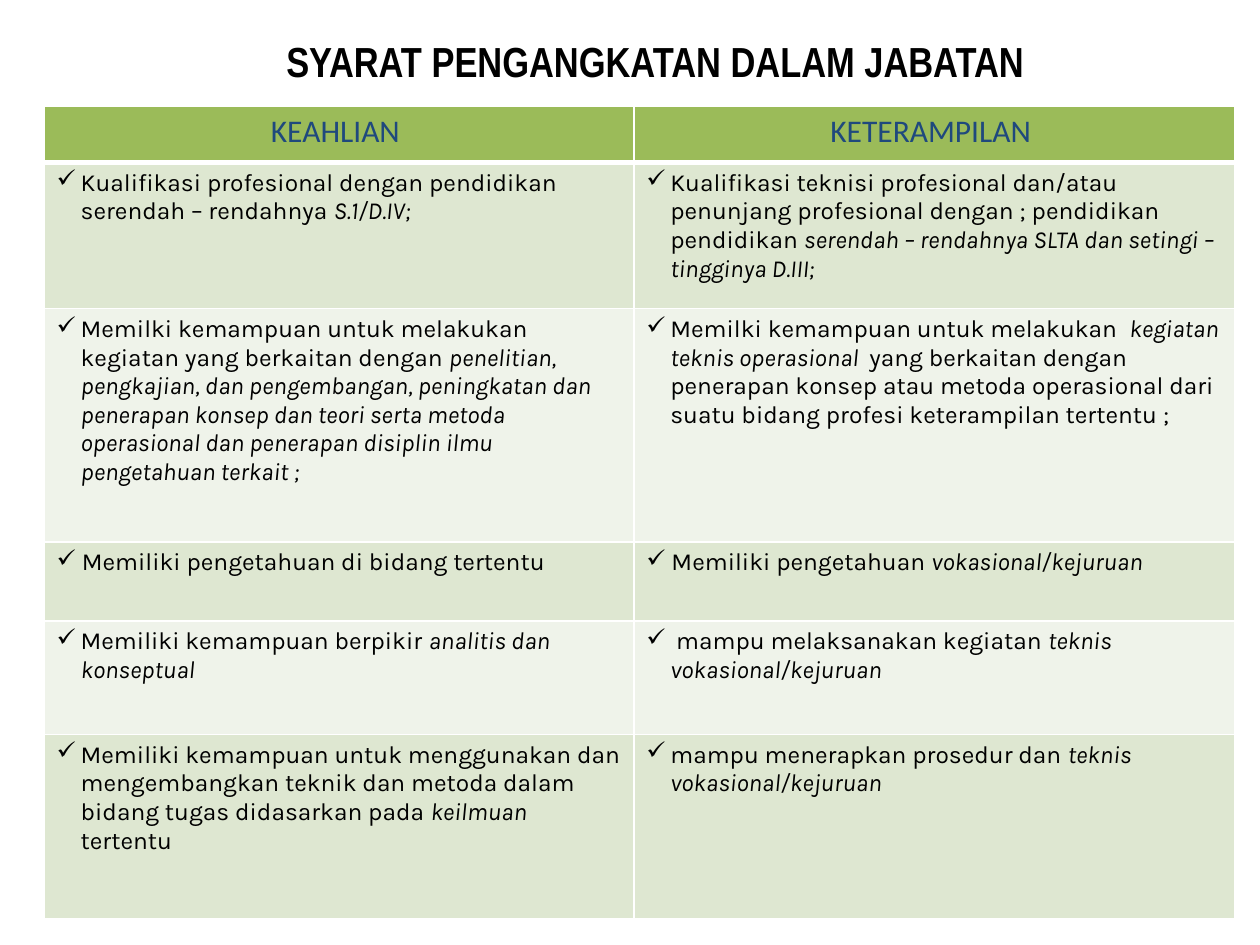
from lxml import etree
from pptx import Presentation
from pptx.dml.color import RGBColor
from pptx.enum import text
from pptx.oxml.ns import qn
from pptx.util import Inches, Pt

COLORS = {"black": "000000", "navy": "1F497D", "green": "9BBB59",
          "band_dark": "DEE7D1", "band_light": "EFF3EA", "white": "FFFFFF"}
TITLE = {"size": Pt(24), "name": "Arial Narrow", "bold": True}
HEAD = {"size": Pt(18), "name": "Calibri", "bold": False}
BODY = {"size": Pt(14), "name": "Karla", "bold": False}
COL_WIDTHS = [4.68, 4.77]
ROW_HEIGHTS = [0.45, 1.16, 1.85, 0.63, 0.9, 1.46]
UNINDENTED_ROW = 3

# Asterisks enclose italic wording
ROWS = [
    ("KEAHLIAN ", "KETERAMPILAN "),
    ("Kualifikasi profesional dengan pendidikan serendah – rendahnya *S.1/D.IV;*",
     "Kualifikasi teknisi profesional dan/atau penunjang profesional dengan ; pendidikan "
     "pendidikan *serendah – rendahnya SLTA dan setingi – tingginya D.III;*"),
    ("Memilki kemampuan untuk melakukan kegiatan yang berkaitan dengan *penelitian, "
     "pengkajian, dan pengembangan, peningkatan dan penerapan konsep dan teori serta metoda "
     "operasional dan penerapan disiplin ilmu pengetahuan terkait ;*",
     "Memilki kemampuan untuk melakukan  *kegiatan teknis operasional  *yang berkaitan dengan "
     "penerapan konsep atau metoda operasional dari suatu bidang profesi keterampilan tertentu ;"),
    (" Memiliki pengetahuan di bidang tertentu",
     " Memiliki pengetahuan *vokasional/kejuruan*"),
    ("Memiliki kemampuan berpikir *analitis dan  konseptual*",
     " mampu melaksanakan kegiatan *teknis  vokasional/kejuruan*"),
    ("Memiliki kemampuan untuk menggunakan dan mengembangkan teknik dan metoda dalam bidang "
     "tugas didasarkan pada *keilmuan* tertentu",
     "mampu menerapkan prosedur dan *teknis  vokasional/kejuruan*"),
]


def add_runs(p, content, fmt, color):
    for i, part in enumerate(content.split("*")):
        if not part:
            continue
        r = p.add_run()
        r.text = part
        for name, value in fmt.items():
            setattr(r.font, name, value)
        r.font.italic = i % 2 == 1
        r.font.color.rgb = RGBColor.from_string(COLORS[color])


def set_borders(cell, bottom):
    tc_pr = cell._tc.get_or_add_tcPr()
    for i, (side, width) in enumerate([("L", 1), ("R", 1), ("T", 1), ("B", bottom)]):
        ln = etree.Element(qn(f"a:ln{side}"), w=str(Pt(width)))
        fill = etree.SubElement(ln, qn("a:solidFill"))
        etree.SubElement(fill, qn("a:srgbClr"), val=COLORS["white"])
        tc_pr.insert(i, ln)


prs = Presentation()
prs.slide_width, prs.slide_height = Inches(10), Inches(7.5)
s = prs.slides.add_slide(prs.slide_layouts[5])

# Title
title = s.shapes.title
title.left, title.top = Inches(1.3), Inches(0.29)
title.width, title.height = Inches(7.8), Inches(0.44)
tf = title.text_frame
tf.auto_size = text.MSO_AUTO_SIZE.NONE
tf.vertical_anchor = text.MSO_ANCHOR.MIDDLE
p = tf.paragraphs[0]
p.alignment = text.PP_ALIGN.CENTER
p.line_spacing = 0.85
add_runs(p, "SYARAT PENGANGKATAN DALAM JABATAN", TITLE, "black")

# Table grid
table = s.shapes.add_table(len(ROWS), 2, Inches(0.35), Inches(0.84),
                           Inches(sum(COL_WIDTHS)), Inches(sum(ROW_HEIGHTS))).table
for col, width in zip(table.columns, COL_WIDTHS):
    col.width = Inches(width)
for row, height in zip(table.rows, ROW_HEIGHTS):
    row.height = Inches(height)

# Header and banded requirement rows
for i, contents in enumerate(ROWS):
    header = i == 0
    band = "green" if header else "band_dark" if i % 2 else "band_light"
    for j, content in enumerate(contents):
        cell = table.cell(i, j)
        cell.fill.solid()
        cell.fill.fore_color.rgb = RGBColor.from_string(COLORS[band])
        set_borders(cell, 3 if header else 1)
        p = cell.text_frame.paragraphs[0]
        if header:
            p.alignment = text.PP_ALIGN.CENTER
            add_runs(p, content, HEAD, "navy")
            continue
        p_pr = p._p.get_or_add_pPr()
        hang = Inches(0 if i == UNINDENTED_ROW else 0.19)
        p_pr.set("marL", str(hang))
        p_pr.set("indent", str(-hang))
        etree.SubElement(p_pr, qn("a:buChar"), char="✓")
        add_runs(p, content, BODY, "black")

prs.save("out.pptx")
